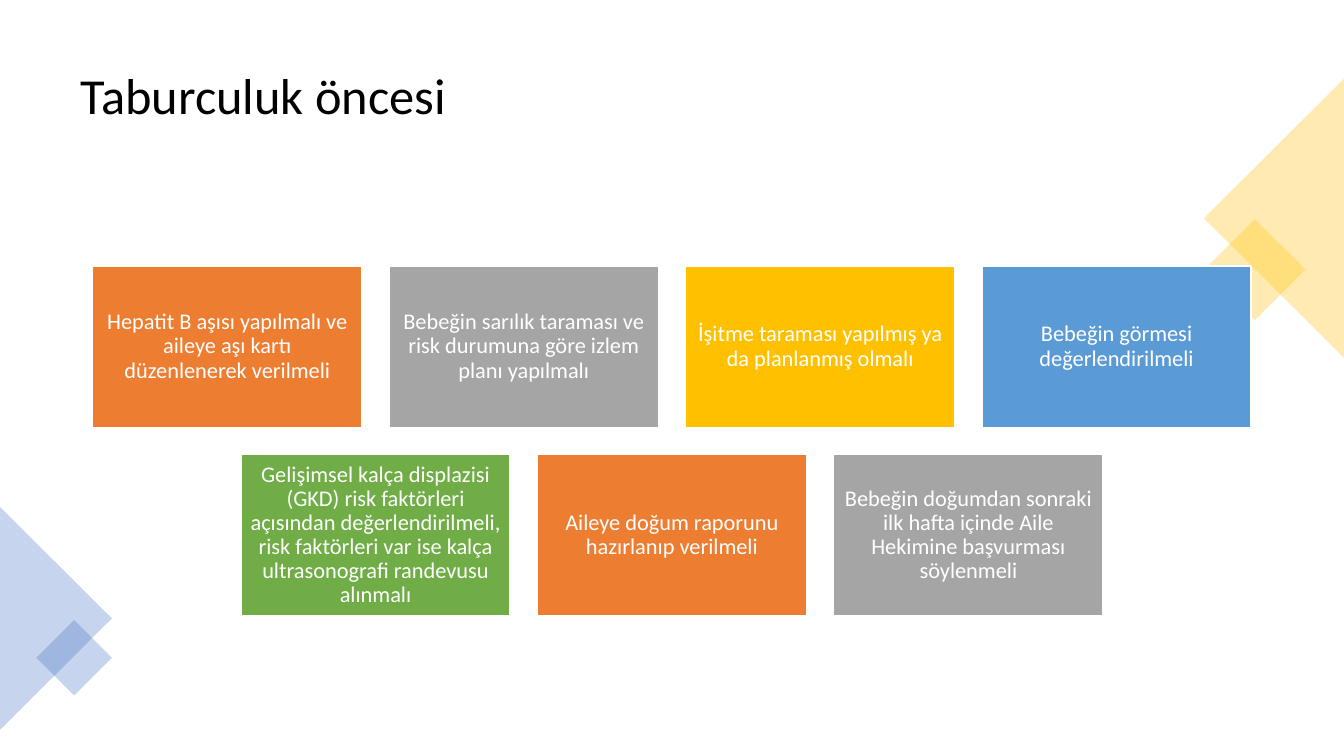
from dataclasses import dataclass

from lxml.etree import SubElement
from pptx import Presentation
from pptx.dml.color import RGBColor
from pptx.enum.shapes import MSO_SHAPE as Kind
from pptx.enum.text import MSO_ANCHOR as Anchor, MSO_AUTO_SIZE as Fit, PP_ALIGN as Align
from pptx.oxml.ns import qn
from pptx.shapes.autoshape import Shape
from pptx.slide import Slide
from pptx.util import Inches, Pt

BLACK = RGBColor(0x00, 0x00, 0x00)
WHITE = RGBColor(0xFF, 0xFF, 0xFF)
ORANGE = RGBColor(0xED, 0x7D, 0x31)
GRAY = RGBColor(0xA5, 0xA5, 0xA5)
GOLD = RGBColor(0xFF, 0xC0, 0x00)
SKY = RGBColor(0x5B, 0x9B, 0xD5)
GREEN = RGBColor(0x70, 0xAD, 0x47)
BLUE = RGBColor(0x44, 0x72, 0xC4)

WIDTH, HEIGHT = 13.33, 7.5
CARD_W, CARD_H, GAP, TOP = 2.67, 1.6, 0.27, 2.64


@dataclass
class Card:
    text: str
    color: RGBColor


@dataclass
class Decor:
    kind: Kind
    left: float
    top: float
    width: float
    height: float
    turn: int
    color: RGBColor


DECOR = [
    Decor(Kind.RECTANGLE, 12.09, 2.32, 0.71, 0.71, 45, GOLD),
    Decor(Kind.ISOSCELES_TRIANGLE, 11.25, 1.47, 2.77, 1.39, 270, GOLD),
    Decor(Kind.ISOSCELES_TRIANGLE, -0.55, 5.58, 2.21, 1.11, 90, BLUE),
    Decor(Kind.RECTANGLE, 0.47, 6.26, 0.53, 0.53, 45, BLUE),
]

ROWS = [
    [
        Card("Hepatit B aşısı yapılmalı ve aileye aşı kartı düzenlenerek verilmeli", ORANGE),
        Card("Bebeğin sarılık taraması ve risk durumuna göre izlem planı yapılmalı", GRAY),
        Card("İşitme taraması yapılmış ya da planlanmış olmalı", GOLD),
        Card("Bebeğin görmesi değerlendirilmeli", SKY),
    ],
    [
        Card("Gelişimsel kalça displazisi (GKD) risk faktörleri açısından "
             "değerlendirilmeli, risk faktörleri var ise kalça ultrasonografi "
             "randevusu alınmalı", GREEN),
        Card("Aileye doğum raporunu hazırlanıp verilmeli", ORANGE),
        Card("Bebeğin doğumdan sonraki ilk hafta içinde Aile Hekimine "
             "başvurması söylenmeli", GRAY),
    ],
]


def write(shape: Shape, text: str, *, size: int, color: RGBColor,
          align: Align, inset: tuple[float, float]) -> None:
    frame = shape.text_frame
    frame.text = text
    frame.word_wrap = True
    frame.auto_size = Fit.NONE
    frame.vertical_anchor = Anchor.MIDDLE
    frame.margin_left = frame.margin_right = Inches(inset[0])
    frame.margin_top = frame.margin_bottom = Inches(inset[1])
    line = frame.paragraphs[0]
    line.alignment = align
    line.line_spacing = 0.9
    line.font.name = "Calibri"
    line.font.size = Pt(size)
    line.font.color.rgb = color


def add_solid(slide: Slide, kind: Kind, left: float, top: float,
              width: float, height: float, color: RGBColor) -> Shape:
    shape = slide.shapes.add_shape(
        kind, Inches(left), Inches(top), Inches(width), Inches(height))
    shape.shadow.inherit = False
    shape.fill.solid()
    shape.fill.fore_color.rgb = color
    return shape


def add_decor(slide: Slide, item: Decor) -> None:
    shape = add_solid(slide, item.kind, item.left, item.top,
                      item.width, item.height, item.color)
    shape.rotation = item.turn
    shape.line.fill.background()
    # Let the background show through
    tint = shape.fill._xPr.find(f"{qn('a:solidFill')}/{qn('a:srgbClr')}")
    SubElement(tint, qn("a:alpha"), val="30000")


def add_row(slide: Slide, cards: list[Card], top: float) -> None:
    step = CARD_W + GAP
    start = (WIDTH - len(cards) * step + GAP) / 2
    for col, card in enumerate(cards):
        shape = add_solid(slide, Kind.RECTANGLE, start + col * step, top,
                          CARD_W, CARD_H, card.color)
        shape.line.color.rgb = WHITE
        shape.line.width = Pt(1)
        write(shape, card.text, size=16, color=WHITE,
              align=Align.CENTER, inset=(0.07, 0.07))


def main() -> None:
    deck = Presentation()
    deck.slide_width, deck.slide_height = Inches(WIDTH), Inches(HEIGHT)
    slide = deck.slides.add_slide(deck.slide_layouts[5])

    # Title
    title = slide.shapes.title
    title.left, title.top = Inches(0.7), Inches(0.35)
    title.width, title.height = Inches(11.93), Inches(1.24)
    write(title, "Taburculuk öncesi", size=36, color=BLACK,
          align=Align.LEFT, inset=(0.1, 0.05))

    # Corner shapes
    for item in DECOR:
        add_decor(slide, item)

    # Centred rows of cards
    for row, cards in enumerate(ROWS):
        add_row(slide, cards, TOP + row * (CARD_H + GAP))

    deck.save("out.pptx")


if __name__ == "__main__":
    main()
